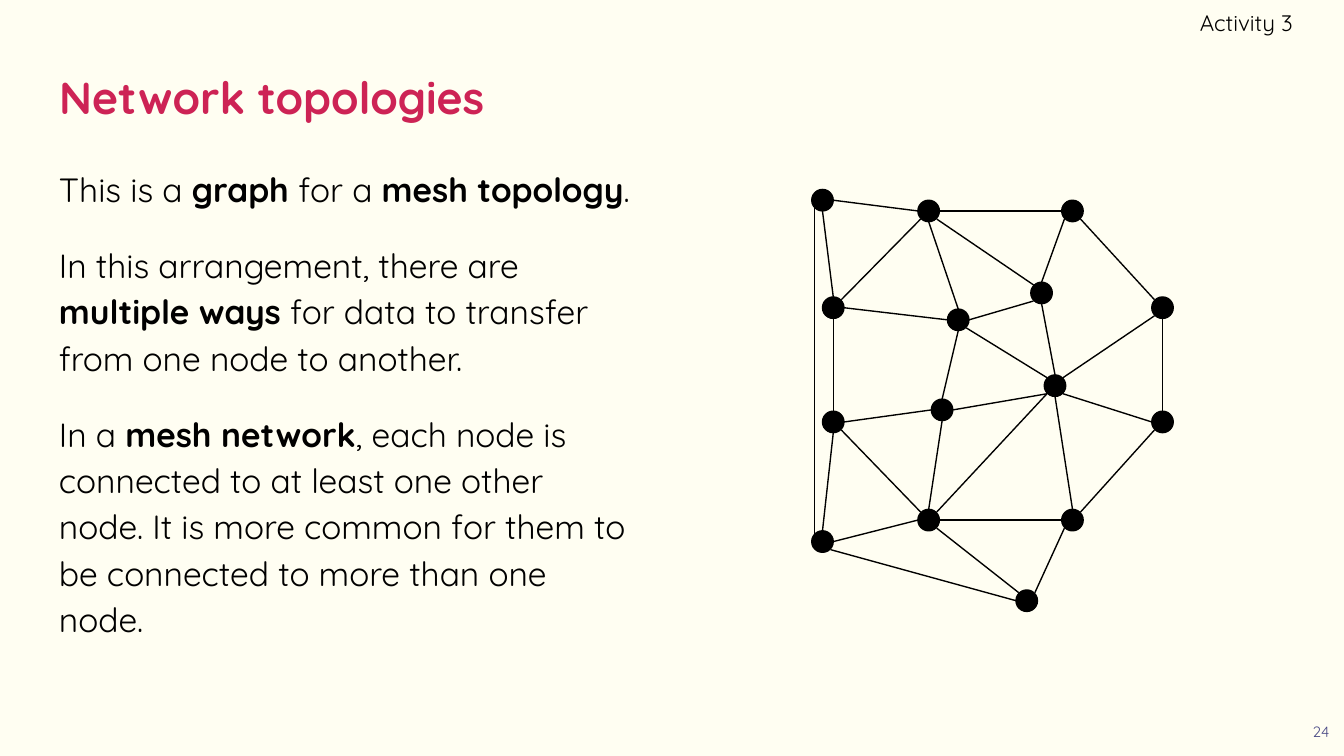
from pptx import Presentation
from pptx import util as u
from pptx.dml.color import RGBColor
from pptx.enum import shapes, text
from pptx.oxml.ns import qn
from lxml import etree

FONT = "Quicksand"
BLACK = "000000"
RADIUS, DIAGONAL = 0.08, 0.06
SITES = {
    "N": (0, -RADIUS), "S": (0, RADIUS), "W": (-RADIUS, 0), "E": (RADIUS, 0),
    "NW": (-DIAGONAL, -DIAGONAL), "NE": (DIAGONAL, -DIAGONAL),
    "SW": (-DIAGONAL, DIAGONAL), "SE": (DIAGONAL, DIAGONAL),
}
NODES = {
    "a": (0.08, 0.08), "b": (0.87, 0.16), "c": (1.94, 0.16),
    "d": (0.16, 0.88), "e": (2.61, 0.88), "f": (1.09, 0.97),
    "g": (1.71, 0.77), "h": (0.97, 1.64), "i": (1.81, 1.46),
    "j": (0.16, 1.73), "k": (2.61, 1.73), "l": (0.87, 2.46),
    "m": (1.94, 2.46), "n": (0.08, 2.62), "o": (1.6, 3.06),
}
EDGES = [
    "b E c W", "c SE e NW", "e S k N", "k SW m NE", "m W l E", "l NW j SE",
    "j N d S", "d NE b SW", "a S d N", "a E b W", "j S n N", "n E l W",
    "a SW n NW", "n SE o W", "l SE o NW", "m SW o NE", "h S l N", "h W j E",
    "f S h N", "d E f W", "b S f N", "b SE g NW", "g N c SW", "f E g SW",
    "h E i SW", "f SE i NW", "g S i N", "i NE e SW", "i SE k W", "i S m N",
    "i SW l NE",
]
BODY = [
    [("This is a ", False), ("graph ", True), ("for a ", False),
     ("mesh topology", True), (".", False)],
    [("In this arrangement, there are ", False), ("multiple ways", True),
     (" for data to transfer from one node to another.", False)],
    [("In a ", False), ("mesh network", True),
     (", each node is connected to at least one other node. It is more common "
      "for them to be connected to more than one node.", False)],
]


def rgb(value):
    return RGBColor.from_string(value)


def place(sp, box):
    sp.left, sp.top, sp.width, sp.height = map(u.Inches, box)


def set_frame(tf, anchor=text.MSO_ANCHOR.TOP, right=0.1):
    tf.word_wrap = True
    tf.auto_size = text.MSO_AUTO_SIZE.NONE
    tf.vertical_anchor = anchor
    tf.margin_left = tf.margin_top = tf.margin_bottom = u.Inches(0.1)
    tf.margin_right = u.Inches(right)


def add_run(p, words, size, color=BLACK, bold=False):
    r = p.add_run()
    r.text = words
    r.font.name = FONT
    r.font.size = u.Pt(size)
    r.font.bold = bold
    r.font.color.rgb = rgb(color)


def add_title(s, box):
    sp = s.shapes.title
    place(sp, box)
    set_frame(sp.text_frame, text.MSO_ANCHOR.MIDDLE)
    p = sp.text_frame.paragraphs[0]
    p.alignment = text.PP_ALIGN.LEFT
    add_run(p, "Network topologies", 24, "CD2355", True)


def add_body(s, box):
    tf = s.shapes.add_textbox(*map(u.Inches, box)).text_frame
    set_frame(tf)
    for i, runs in enumerate(BODY):
        p = tf.add_paragraph() if i else tf.paragraphs[0]
        p.line_spacing = 1.15
        if i:
            p.space_before = u.Pt(16)
        for words, bold in runs:
            add_run(p, words, 18, bold=bold)


def add_label(s, box, words, size, color, align, anchor, right):
    tf = s.shapes.add_textbox(*map(u.Inches, box)).text_frame
    set_frame(tf, anchor, right)
    p = tf.paragraphs[0]
    p.alignment = align
    add_run(p, words, size, color)


def add_mesh(s, left, top):
    def site(node, side):
        x, y = NODES[node]
        dx, dy = SITES[side]
        return u.Inches(left + x + dx), u.Inches(top + y + dy)

    for x, y in NODES.values():
        sp = s.shapes.add_shape(
            shapes.MSO_SHAPE.OVAL, u.Inches(left + x - RADIUS),
            u.Inches(top + y - RADIUS), u.Inches(2 * RADIUS), u.Inches(2 * RADIUS))
        sp.shadow.inherit = False
        sp.fill.solid()
        sp.fill.fore_color.rgb = rgb(BLACK)
        sp.line.color.rgb = rgb(BLACK)
        sp.line.width = u.Pt(0.75)
    for edge in EDGES:
        start, start_side, end, end_side = edge.split()
        line = s.shapes.add_connector(
            shapes.MSO_CONNECTOR.STRAIGHT, *site(start, start_side), *site(end, end_side))
        line.line.color.rgb = rgb(BLACK)
        line.line.width = u.Pt(0.75)
        etree.SubElement(line._element.spPr, qn("a:effectLst"))


def main():
    prs = Presentation()
    prs.slide_width = u.Inches(10)
    prs.slide_height = prs.slide_width * 9 // 16
    s = prs.slides.add_slide(prs.slide_layouts[5])
    s.background.fill.solid()
    s.background.fill.fore_color.rgb = rgb("FFFEF2")
    add_title(s, (0.34, 0.34, 9.32, 0.76))
    add_body(s, (0.34, 1.11, 4.48, 4))
    add_label(s, (7.48, 0, 2.14, 0.34), "Activity 3", 12, BLACK,
              text.PP_ALIGN.RIGHT, text.MSO_ANCHOR.MIDDLE, 0)
    add_label(s, (9.66, 5.28, 0.34, 0.34), "24", 8, "494985",
              text.PP_ALIGN.CENTER, text.MSO_ANCHOR.TOP, 0.1)
    add_mesh(s, 6.04, 1.41)
    prs.save("out.pptx")


if __name__ == "__main__":
    main()
